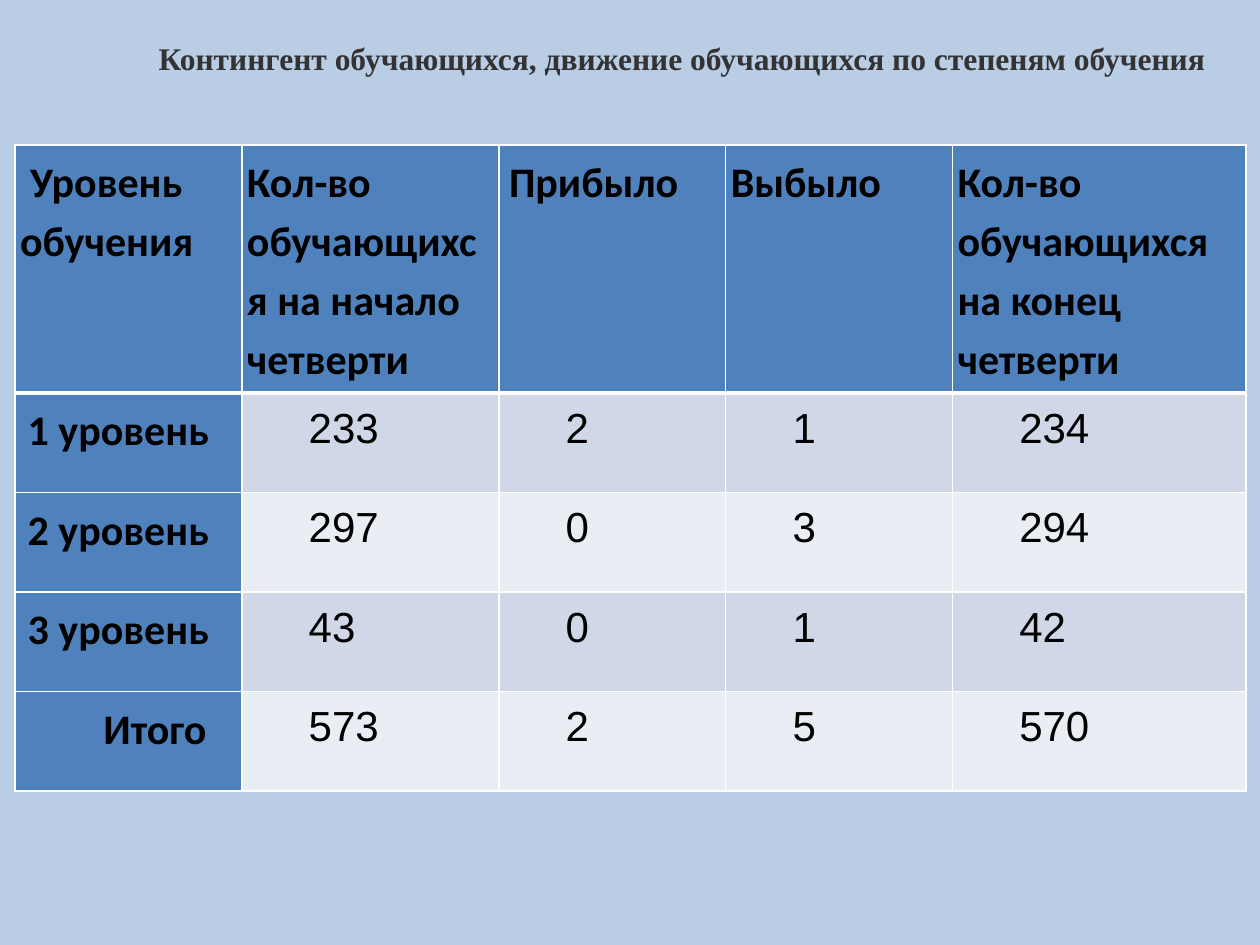
from lxml.etree import SubElement
from pptx import Presentation
from pptx.dml.color import RGBColor
from pptx.enum.text import MSO_ANCHOR as Anchor, PP_ALIGN as Align
from pptx.oxml.ns import qn
from pptx.util import Inches, Pt

COLORS = {
    "background": "B9CDE5",
    "header": "4F81BD",
    "odd": "D0D8E8",
    "even": "E9EDF4",
    "border": "FFFFFF",
    "text": "000000",
    "title": "333333",
}
GRID_COLUMNS, GRID_ROWS = 100, 75
TITLE = "Контингент обучающихся, движение обучающихся по степеням обучения"
COLUMN_WIDTHS = [18, 20.4, 18, 18, 23.3]
ROW_HEIGHTS = [19.7] + [7.9] * 4
HEADERS = [
    [("Уровень", 0.8), ("обучения", 0)],
    [("Кол-во обучающихся на начало четверти", 0)],
    [("Прибыло", 0.4)],
    [("Выбыло", 0)],
    [("Кол-во обучающихся на конец четверти", 0)],
]
LEVELS = [
    ("1 уровень", 233, 2, 1, 234),
    ("2 уровень", 297, 0, 3, 294),
    ("3 уровень", 43, 0, 1, 42),
    ("Итого", 573, 2, 5, 570),
]


class SlideBuilder:
    def __init__(self, presentation):
        self.slide = presentation.slides.add_slide(presentation.slide_layouts[6])
        self.column = presentation.slide_width / GRID_COLUMNS
        self.row = presentation.slide_height / GRID_ROWS
        self.paint(self.slide.background.fill, "background")

    def across(self, columns):
        return round(columns * self.column)

    def down(self, rows):
        return round(rows * self.row)

    def paint(self, fill, color):
        fill.solid()
        fill.fore_color.rgb = RGBColor.from_string(COLORS[color])

    def set_text(self, paragraph, text, size, font, color, bold=True, indent=0):
        paragraph.text = text
        properties = paragraph._p.get_or_add_pPr()
        properties.set("marL", "0")
        properties.set("indent", str(self.across(indent)))
        paragraph.font.size = Pt(size)
        paragraph.font.name = font
        paragraph.font.bold = bold
        paragraph.font.color.rgb = RGBColor.from_string(COLORS[color])

    def title(self, text, left, top, width, height):
        box = self.slide.shapes.add_textbox(
            self.across(left), self.down(top), self.across(width), self.down(height))
        frame = box.text_frame
        frame.word_wrap = True
        frame.vertical_anchor = Anchor.TOP
        self.set_text(frame.paragraphs[0], text, 18, "Times New Roman", "title", indent=4.9)

    def table(self, left, top, widths, heights):
        frame = self.slide.shapes.add_table(
            len(heights), len(widths), self.across(left), self.down(top),
            self.across(sum(widths)), self.down(sum(heights)))
        for column, width in zip(frame.table.columns, widths):
            column.width = self.across(width)
        for row, height in zip(frame.table.rows, heights):
            row.height = self.down(height)
        return frame.table

    def borders(self, cell, **widths):
        properties = cell._tc.get_or_add_tcPr()
        for side in "LRTB":
            line = SubElement(properties, qn(f"a:ln{side}"), w=str(Pt(widths.get(side, 1))))
            fill = SubElement(line, qn("a:solidFill"))
            SubElement(fill, qn("a:srgbClr"), val=COLORS["border"])

    def cell(self, cell, lines, fill, font="Calibri", bold=True, align=Align.LEFT, **borders):
        self.borders(cell, **borders)
        self.paint(cell.fill, fill)
        cell.margin_left = cell.margin_right = self.across(0.4)
        cell.margin_top = cell.margin_bottom = self.down(0.4)
        frame = cell.text_frame
        for index, (text, indent) in enumerate(lines):
            paragraph = frame.add_paragraph() if index else frame.paragraphs[0]
            self.set_text(paragraph, text, 24, font, "text", bold, indent)
            paragraph.alignment = align
            paragraph.line_spacing = 1.15


def main():
    presentation = Presentation()
    presentation.slide_width, presentation.slide_height = Inches(10), Inches(7.5)
    builder = SlideBuilder(presentation)

    table = builder.table(1.2, 11.5, COLUMN_WIDTHS, ROW_HEIGHTS)
    for column, lines in enumerate(HEADERS):
        builder.cell(table.cell(0, column), lines, "header", B=3)
    for row, (level, *counts) in enumerate(LEVELS, start=1):
        is_total = row == len(LEVELS)
        top_border = 3 if row == 1 else 1
        builder.cell(table.cell(row, 0), [(level, 4.2 if is_total else 0.6)], "header",
                     align=Align.CENTER if is_total else Align.LEFT, T=top_border)
        for column, count in enumerate(counts, start=1):
            builder.cell(table.cell(row, column), [(str(count), 4.9)],
                         "odd" if row % 2 else "even", font="Arial", bold=False,
                         T=top_border)

    builder.title(TITLE, 6.7, 2.6, 90.9, 7.1)
    presentation.save("out.pptx")


if __name__ == "__main__":
    main()
